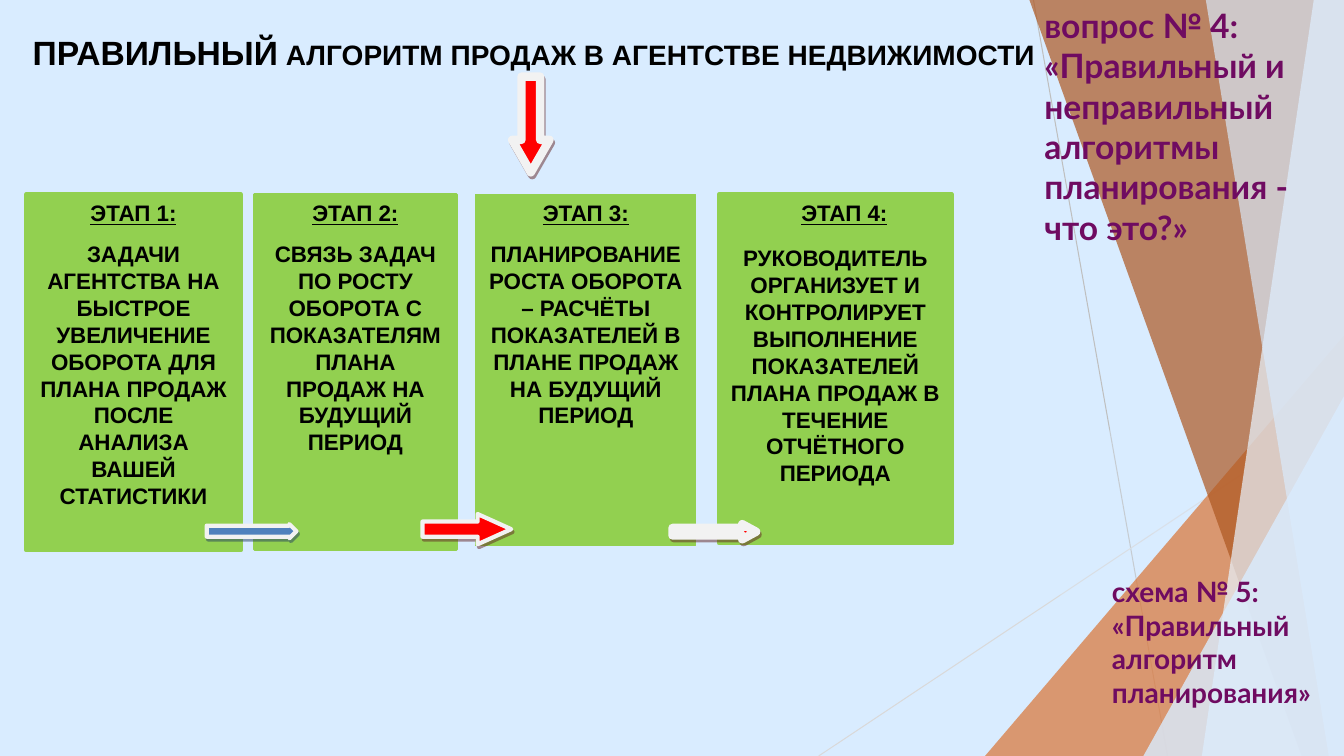
import dataclasses

import lxml.etree
import pptx
import pptx.dml.color
import pptx.enum.shapes
import pptx.enum.text
import pptx.oxml.ns
import pptx.util

EMU_PER_PX = 9144
WIDTH, HEIGHT = 1333, 750
SKY, GREEN, PLUM, BLACK = "D9ECFF", "92D050", "6F0B61", "000000"
RED, BLUE, PALE = "FF0000", "4F81BD", "F2F2F2"
SHAPE = pptx.enum.shapes.MSO_SHAPE
ALIGN = pptx.enum.text.PP_ALIGN
ANCHOR = pptx.enum.text.MSO_ANCHOR


@dataclasses.dataclass
class Ray:
    begin: tuple[int, int]
    end: tuple[int, int]
    color: str


@dataclasses.dataclass
class Facet:
    """Area between a slanted left edge and the right side of the slide."""
    top_x: int
    bottom_x: int
    color: str
    opacity: int


@dataclasses.dataclass
class Wedge:
    """Right triangle standing on the bottom of the slide."""
    left: int
    top: int
    width: int
    apex: int
    color: str
    opacity: int


@dataclasses.dataclass
class Stage:
    box: tuple[int, int, int, int]
    border: float
    paragraphs: list[str]
    gap: int = 10
    heading_indent: int = 0


@dataclasses.dataclass
class Arrow:
    kind: SHAPE
    box: tuple[int, int, int, int]
    adjustments: tuple[float, float]
    fill: str
    border: float
    shadow: str


RAYS = [Ray((1025, 0), (1158, 750), "BFBFBF"), Ray((1333, 403), (812, 750), "D9D9D9")]
BACKDROP = [
    Facet(1228, 1004, SKY, 30),
    Facet(1050, 1183, SKY, 20),
    Wedge(977, 333, 356, 1, "DA773A", 72),
    Facet(1021, 1291, "AE5721", 70),
    Facet(1303, 1192, "E8F4FF", 70),
    Facet(1196, 1318, SKY, 65),
    Wedge(1134, 393, 199, 1, SKY, 80),
    Wedge(0, 439, 49, 0, SKY, 85),
]
STAGES = [
    Stage((26, 193, 213, 353), 3, [
        "ЗАДАЧИ АГЕНТСТВА НА БЫСТРОЕ УВЕЛИЧЕНИЕ ОБОРОТА ДЛЯ ПЛАНА ПРОДАЖ "
        "ПОСЛЕ АНАЛИЗА ВАШЕЙ СТАТИСТИКИ"]),
    Stage((252, 193, 201, 352), 2.25, [
        "СВЯЗЬ ЗАДАЧ ПО РОСТУ ОБОРОТА С ПОКАЗАТЕЛЯМ ПЛАНА ПРОДАЖ НА БУДУЩИЙ ПЕРИОД"]),
    Stage((472, 193, 218, 348), 0.75, [
        "ПЛАНИРОВАНИЕ РОСТА ОБОРОТА – РАСЧЁТЫ ПОКАЗАТЕЛЕЙ В ПЛАНЕ ПРОДАЖ "
        "НА БУДУЩИЙ ПЕРИОД"]),
    Stage((713, 193, 231, 346), 3, [
        "РУКОВОДИТЕЛЬ ОРГАНИЗУЕТ И КОНТРОЛИРУЕТ",
        "ВЫПОЛНЕНИЕ ПОКАЗАТЕЛЕЙ ПЛАНА ПРОДАЖ В ТЕЧЕНИЕ ОТЧЁТНОГО ПЕРИОДА"],
        gap=13, heading_indent=18),
]
START_ARROW = Arrow(SHAPE.DOWN_ARROW, (508, 76, 37, 95), (0.5, 0.87), RED, 6, "622423")
STEP_ARROWS = [
    Arrow(SHAPE.RIGHT_ARROW, (205, 520, 89, 14), (0.78, 0.5), BLUE, 3, "243F60"),
    Arrow(SHAPE.RIGHT_ARROW, (419, 510, 88, 30), (0.5, 1.11), RED, 3, "622423"),
    Arrow(SHAPE.RIGHT_ARROW, (667, 520, 83, 15), (0.5, 0.92), RED, 6, "622423"),
]


def px(length: int) -> int:
    return length * EMU_PER_PX


def rgb(color: str) -> pptx.dml.color.RGBColor:
    return pptx.dml.color.RGBColor.from_string(color)


def add_element(parent, tag: str, **attributes: str):
    element = lxml.etree.SubElement(parent, pptx.oxml.ns.qn(tag))
    for name, value in attributes.items():
        element.set(name, value)
    return element


def paint(shape, fill: str, line: str | None = None, border: float = 0) -> None:
    shape.shadow.inherit = False
    shape.fill.solid()
    shape.fill.fore_color.rgb = rgb(fill)
    if line is None:
        shape.line.fill.background()
    else:
        shape.line.color.rgb = rgb(line)
        shape.line.width = pptx.util.Pt(border)


def set_font(font, size: float, color: str, name: str) -> None:
    font.name, font.size, font.bold = name, pptx.util.Pt(size), True
    font.color.rgb = rgb(color)


def add_preset(slide, kind: SHAPE, box: tuple[int, int, int, int]):
    return slide.shapes.add_shape(kind, *map(px, box))


def add_ray(slide, ray: Ray) -> None:
    line = slide.shapes.add_connector(
        pptx.enum.shapes.MSO_CONNECTOR.STRAIGHT, *map(px, ray.begin + ray.end))
    line.line.color.rgb = rgb(ray.color)
    line.line.width = pptx.util.Pt(0.75)
    add_element(line._element.spPr, "a:effectLst")


def add_backdrop_part(slide, part: Facet | Wedge) -> None:
    if isinstance(part, Facet):
        builder = slide.shapes.build_freeform(part.top_x, 0, scale=EMU_PER_PX)
        builder.add_line_segments([(WIDTH, 0), (WIDTH, HEIGHT), (part.bottom_x, HEIGHT)])
        shape = builder.convert_to_shape()
    else:
        shape = add_preset(slide, SHAPE.ISOSCELES_TRIANGLE,
                           (part.left, part.top, part.width, HEIGHT - part.top))
        shape.adjustments[0] = part.apex
    paint(shape, part.color)
    color = shape._element.spPr.find(".//" + pptx.oxml.ns.qn("a:srgbClr"))
    add_element(color, "a:alpha", val=str(part.opacity * 1000))


def add_text_box(slide, box: tuple[int, int, int, int], wrap: bool = True):
    frame = slide.shapes.add_textbox(*map(px, box)).text_frame
    frame.word_wrap = wrap
    return frame


def add_caption(slide, box: tuple[int, int, int, int], text: str, size: int) -> None:
    paragraph = add_text_box(slide, box).paragraphs[0]
    paragraph.text = text
    set_font(paragraph.font, size, PLUM, "Lato")


def add_title(slide) -> None:
    frame = add_text_box(slide, (18, 27, 1023, 50), wrap=False)
    frame.vertical_anchor = ANCHOR.MIDDLE
    paragraph = frame.paragraphs[0]
    paragraph.alignment = ALIGN.CENTER
    for text, size in (("ПРАВИЛЬНЫЙ", 24),
                       (" АЛГОРИТМ ПРОДАЖ В АГЕНТСТВЕ НЕДВИЖИМОСТИ", 20)):
        run = paragraph.add_run()
        run.text = text
        set_font(run.font, size, BLACK, "Arial")


def add_stage(slide, number: int, stage: Stage) -> None:
    shape = add_preset(slide, SHAPE.RECTANGLE, stage.box)
    paint(shape, GREEN, GREEN, stage.border)
    frame = shape.text_frame
    frame.word_wrap = True
    frame.vertical_anchor = ANCHOR.TOP
    frame.text = "\n".join([f"ЭТАП {number}:", *stage.paragraphs])
    for paragraph in frame.paragraphs:
        paragraph.alignment = ALIGN.CENTER
        paragraph.line_spacing = pptx.util.Pt(19.2)
        set_font(paragraph.font, 16, BLACK, "Arial")
    heading = frame.paragraphs[0]
    heading.font.underline = True
    heading.space_after = pptx.util.Pt(stage.gap)
    heading._p.get_or_add_pPr().set("marL", str(px(stage.heading_indent)))


def add_arrow(slide, arrow: Arrow) -> None:
    shape = add_preset(slide, arrow.kind, arrow.box)
    for index, value in enumerate(arrow.adjustments):
        shape.adjustments[index] = value
    paint(shape, arrow.fill, PALE, arrow.border)
    effects = shape._element.spPr.find(pptx.oxml.ns.qn("a:effectLst"))
    shadow = add_element(effects, "a:outerShdw", dist="28400", dir="3800000",
                         algn="ctr", rotWithShape="0")
    add_element(add_element(shadow, "a:srgbClr", val=arrow.shadow), "a:alpha", val="50000")


def main() -> None:
    deck = pptx.Presentation()
    deck.slide_width, deck.slide_height = px(WIDTH), px(HEIGHT)
    slide = deck.slides.add_slide(deck.slide_layouts[6])
    slide.background.fill.solid()
    slide.background.fill.fore_color.rgb = rgb(SKY)
    for ray in RAYS:
        add_ray(slide, ray)
    for part in BACKDROP:
        add_backdrop_part(slide, part)
    add_caption(slide, (1093, 565, 240, 145),
                "схема № 5: «Правильный алгоритм планирования»", 20)
    add_caption(slide, (1026, 0, 307, 283),
                "вопрос № 4: «Правильный и неправильный алгоритмы планирования - что это?»", 24)
    add_arrow(slide, START_ARROW)
    add_title(slide)
    for number, stage in enumerate(STAGES, start=1):
        add_stage(slide, number, stage)
    for arrow in STEP_ARROWS:
        add_arrow(slide, arrow)
    deck.save("out.pptx")


if __name__ == "__main__":
    main()
